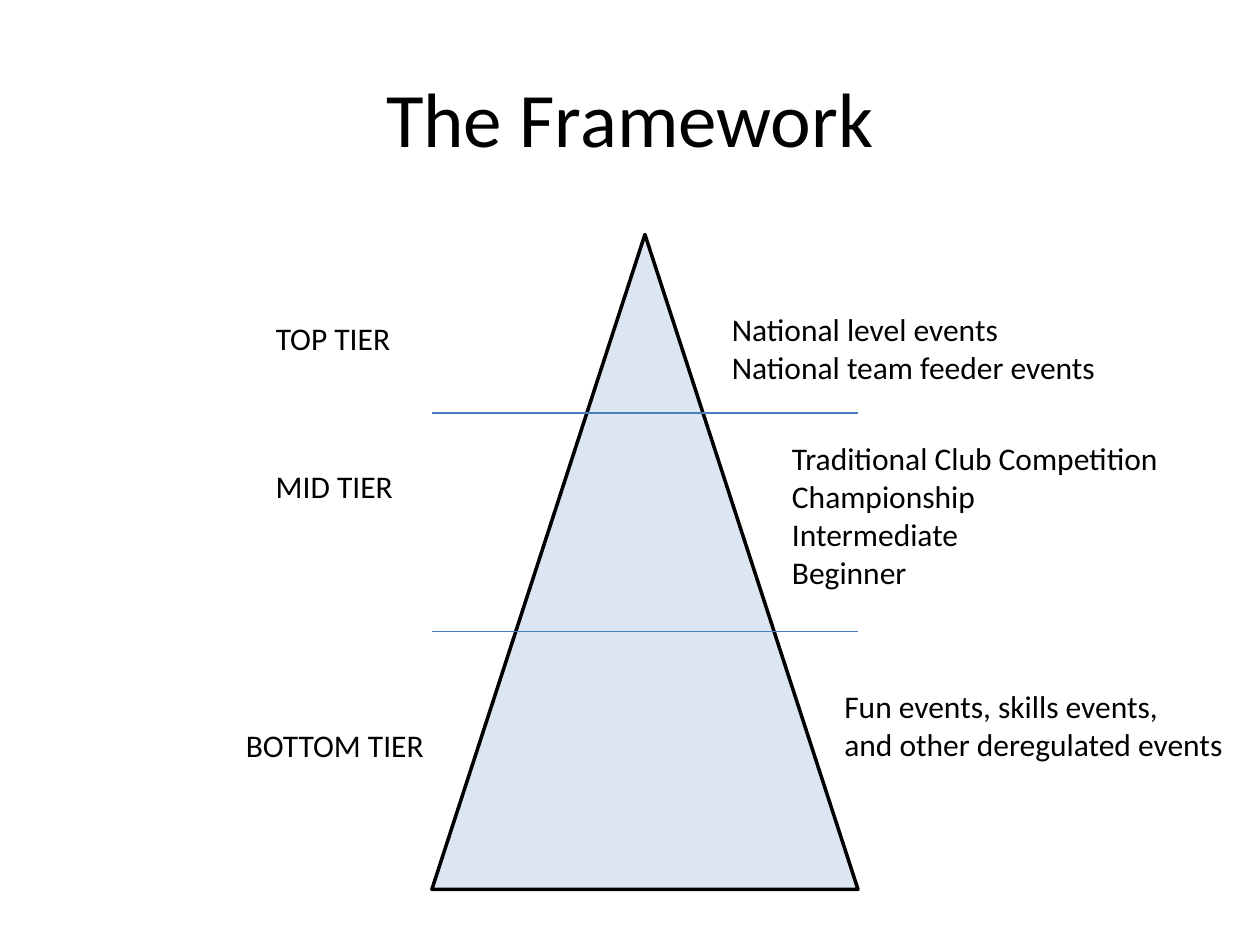
import pptx
import pptx.util
import pptx.dml.color
import pptx.enum.shapes
import pptx.enum.text
import pptx.oxml
import pptx.oxml.ns

Pt = pptx.util.Pt
RGBColor = pptx.dml.color.RGBColor

BLACK = RGBColor(0x00, 0x00, 0x00)
PALE_BLUE = RGBColor(0xDC, 0xE6, 0xF2)
BLUE = RGBColor(0x4B, 0x7E, 0xBC)
FONT = "Calibri"

TITLE = "The Framework"
TIERS = [
    {"name": "TOP TIER", "name_box": (150.5, 178.6, 80.6),
     "events": ["National level events", "National team feeder events"],
     "events_box": (411.1, 173.5, 224.6)},
    {"name": "MID TIER", "name_box": (150.5, 263.5, 82.1),
     "events": ["Traditional Club Competition", "Championship",
                "Intermediate", "Beginner"],
     "events_box": (445.5, 247.5, 226.1)},
    {"name": "BOTTOM TIER", "name_box": (133.4, 411.1, 117.4),
     "events": ["Fun events, skills events,", "and other deregulated events"],
     "events_box": (475.4, 388.9, 233.3)},
]
PYRAMID = (246.8, 134, 243.5, 374.2)
DIVIDERS = [236, 360.8]
LINE_HEIGHT = 21.8
INSET = 3.6


def format_paragraph(p, size):
    p.font.size = Pt(size)
    p.font.name = FONT
    p.font.color.rgb = BLACK


def add_label(slide, lines, box):
    left, top, width = box
    height = len(lines) * LINE_HEIGHT + 2 * INSET
    tb = slide.shapes.add_textbox(Pt(left), Pt(top), Pt(width), Pt(height))
    tf = tb.text_frame
    tf.word_wrap = False
    tf.auto_size = pptx.enum.text.MSO_AUTO_SIZE.SHAPE_TO_FIT_TEXT
    tf.text = "\n".join(lines)
    for p in tf.paragraphs:
        format_paragraph(p, 18)


def add_title(slide):
    sp = slide.shapes.title
    sp.left, sp.top, sp.width, sp.height = Pt(36), Pt(21.6), Pt(648), Pt(90)
    tf = sp.text_frame
    tf.text = TITLE
    tf.vertical_anchor = pptx.enum.text.MSO_ANCHOR.MIDDLE
    p = tf.paragraphs[0]
    p.alignment = pptx.enum.text.PP_ALIGN.CENTER
    format_paragraph(p, 44)


def add_pyramid(slide):
    sp = slide.shapes.add_shape(
        pptx.enum.shapes.MSO_SHAPE.ISOSCELES_TRIANGLE, *map(Pt, PYRAMID))
    sp.shadow.inherit = False
    sp.fill.solid()
    sp.fill.fore_color.rgb = PALE_BLUE
    sp.line.color.rgb = BLACK
    sp.line.width = Pt(2)


def add_divider(slide, y):
    left, _, width, _ = PYRAMID
    line = slide.shapes.add_connector(
        pptx.enum.shapes.MSO_CONNECTOR.STRAIGHT,
        Pt(left + width), Pt(y), Pt(left), Pt(y))
    line.line.color.rgb = BLUE
    line.line.width = Pt(0.75)
    effects = pptx.oxml.parse_xml(
        "<a:effectLst %s/>" % pptx.oxml.ns.nsdecls("a"))
    line._element.spPr.append(effects)


def main():
    prs = pptx.Presentation()
    prs.slide_width, prs.slide_height = Pt(720), Pt(540)
    slide = prs.slides.add_slide(prs.slide_layouts.get_by_name("Title Only"))
    add_title(slide)
    for tier in TIERS:
        add_label(slide, [tier["name"]], tier["name_box"])
    add_pyramid(slide)
    for y in DIVIDERS:
        add_divider(slide, y)
    for tier in TIERS:
        add_label(slide, tier["events"], tier["events_box"])
    prs.save("out.pptx")


if __name__ == "__main__":
    main()
